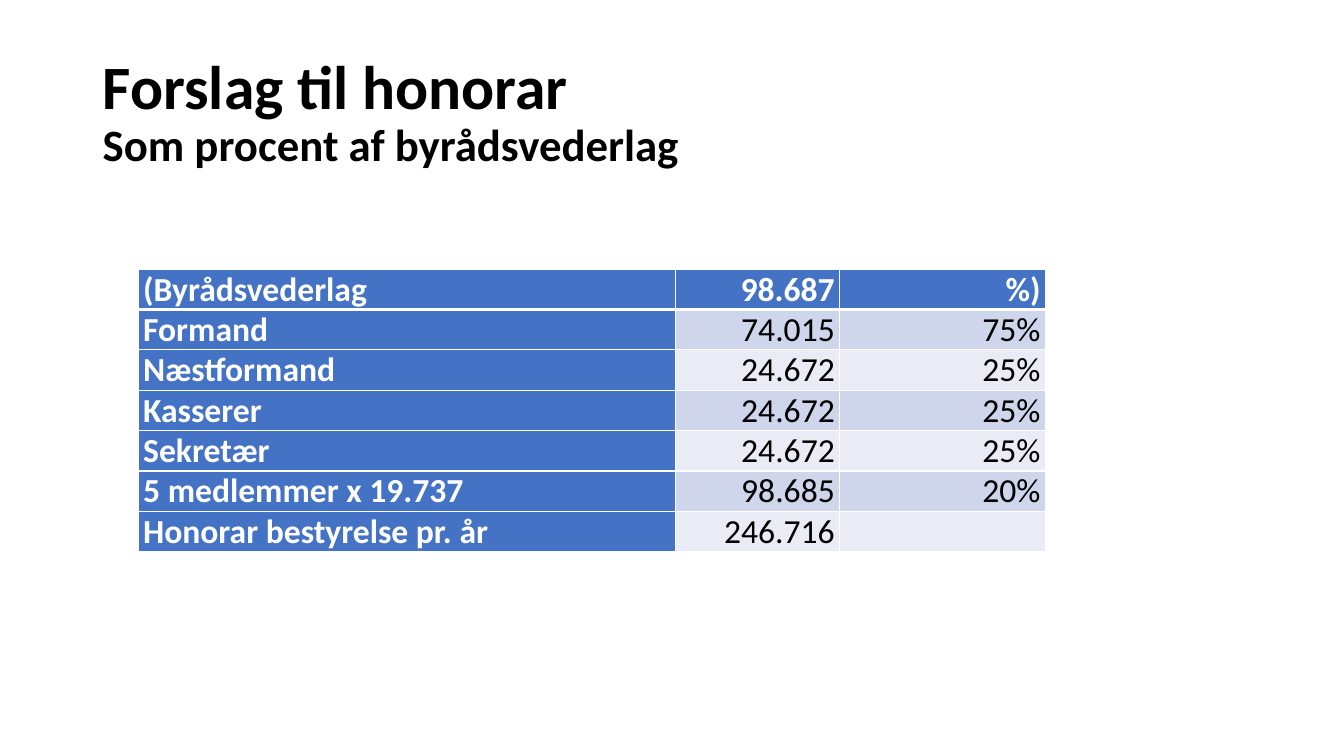
from dataclasses import dataclass

from lxml.etree import SubElement
from pptx import Presentation
from pptx.dml.color import RGBColor
from pptx.enum.text import MSO_ANCHOR, PP_ALIGN
from pptx.oxml.ns import qn
from pptx.util import Inches, Pt

FONT = "Calibri"
BLACK, WHITE, BLUE = "000000", "FFFFFF", "4472C4"
BANDS = ("CFD5EA", "E9EBF5")
WIDTHS = (5.33, 1.63, 2.04)
HEIGHT = 0.4


@dataclass
class Fee:
    role: str
    amount: str
    share: str


FEES = [
    Fee("(Byrådsvederlag", "98.687", "%)"),
    Fee("Formand", "74.015", "75%"),
    Fee("Næstformand", "24.672", "25%"),
    Fee("Kasserer", "24.672", "25%"),
    Fee("Sekretær", "24.672", "25%"),
    Fee("5 medlemmer x 19.737", "98.685", "20%"),
    Fee("Honorar bestyrelse pr. år", "246.716", ""),
]


def color(code: str) -> RGBColor:
    return RGBColor.from_string(code)


def add_run(para, text: str, size: float, code: str, bold: bool) -> None:
    run = para.add_run()
    run.text = text
    font = run.font
    font.name, font.size, font.bold = FONT, Pt(size), bold
    font.color.rgb = color(code)


def add_edge(cell, side: str, width: float) -> None:
    """Draw one white cell border; call before the cell is filled."""
    props = cell._tc.get_or_add_tcPr()
    line = SubElement(props, qn(f"a:ln{side}"), w=str(Pt(width)))
    fill = SubElement(line, qn("a:solidFill"))
    SubElement(fill, qn("a:srgbClr"), val=WHITE)


def add_title(slide) -> None:
    box = slide.shapes.add_textbox(Inches(0.92), Inches(0.4), Inches(11.5), Inches(1.45))
    frame = box.text_frame
    frame.word_wrap = True
    frame.vertical_anchor = MSO_ANCHOR.MIDDLE
    para = frame.paragraphs[0]
    para.line_spacing = 0.9
    add_run(para, "Forslag til honorar", 44, BLACK, True)
    para.add_line_break()
    add_run(para, "Som procent af byrådsvederlag", 32, BLACK, True)


def fill_cell(cell, text: str, row: int, col: int) -> None:
    head = row == 0 or col == 0
    cell.margin_left = cell.margin_right = Inches(0.05)
    cell.margin_top = cell.margin_bottom = 0
    cell.vertical_anchor = MSO_ANCHOR.BOTTOM
    for side in "LRTB":
        thick = (row, side) in ((0, "B"), (1, "T"))
        add_edge(cell, side, 3 if thick else 1)
    cell.fill.solid()
    cell.fill.fore_color.rgb = color(BLUE if head else BANDS[(row - 1) % 2])
    para = cell.text_frame.paragraphs[0]
    para.alignment = PP_ALIGN.RIGHT if col else PP_ALIGN.LEFT
    if text:
        add_run(para, text, 24, WHITE if head else BLACK, head)


def add_fees(slide) -> None:
    frame = slide.shapes.add_table(
        len(FEES), len(WIDTHS), Inches(1.37), Inches(2.67),
        Inches(sum(WIDTHS)), Inches(HEIGHT * len(FEES)),
    )
    table = frame.table
    table.first_col = True
    for col, width in enumerate(WIDTHS):
        table.columns[col].width = Inches(width)
    for row, fee in enumerate(FEES):
        table.rows[row].height = Inches(HEIGHT)
        for col, text in enumerate((fee.role, fee.amount, fee.share)):
            fill_cell(table.cell(row, col), text, row, col)


def main() -> None:
    deck = Presentation()
    deck.slide_width, deck.slide_height = Inches(13.33), Inches(7.5)
    slide = deck.slides.add_slide(deck.slide_layouts[6])
    add_title(slide)
    add_fees(slide)
    deck.save("out.pptx")


if __name__ == "__main__":
    main()
